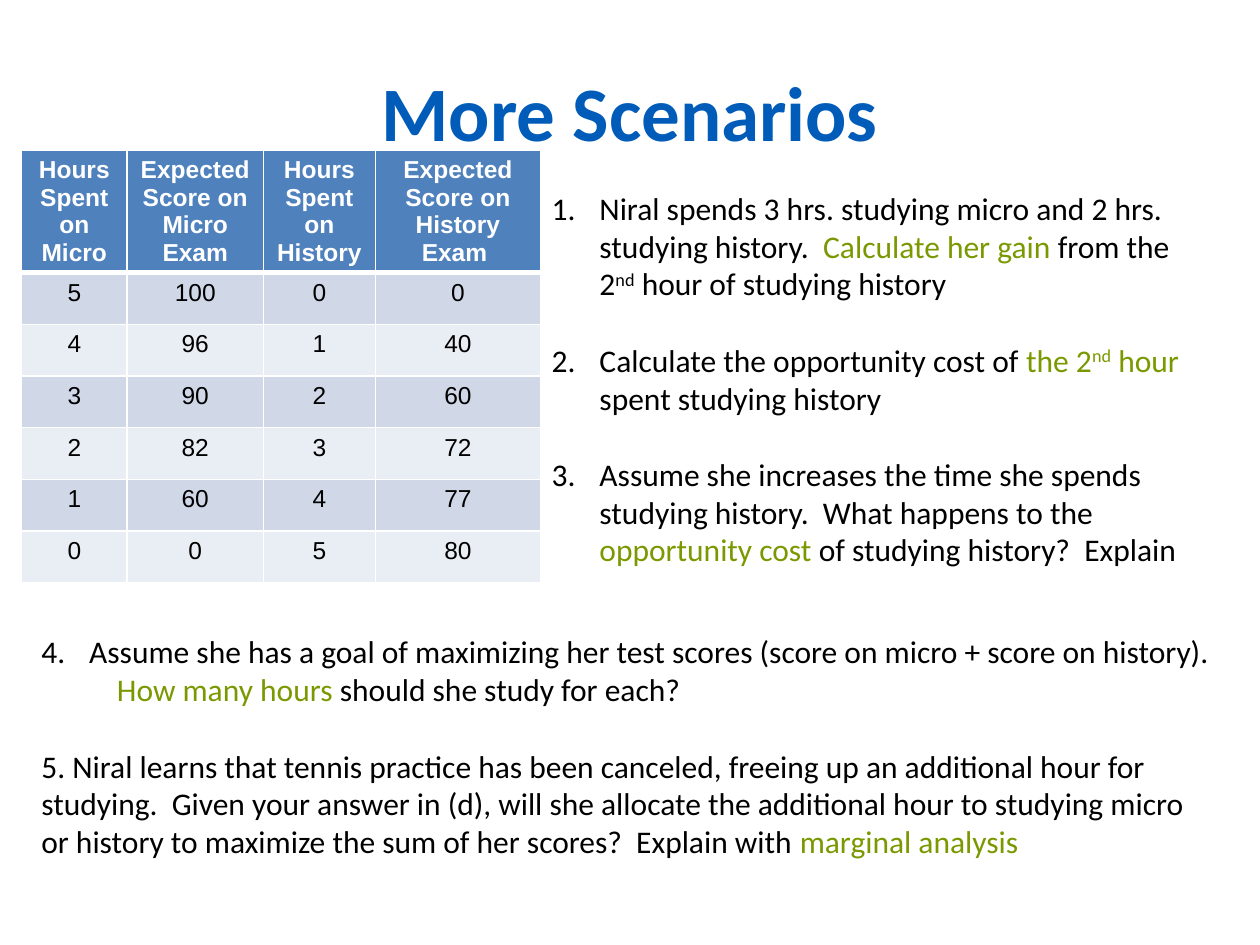
import pptx
import pptx.util
import pptx.dml.color
import pptx.enum.text
import pptx.oxml
import pptx.oxml.ns

COLS, ROWS = 100, 75
BLUE, GREEN, BLACK, WHITE = "005CB8", "7A9900", "000000", "FFFFFF"
HEAD, BANDS = "4F81BD", ("D0D8E8", "E9EDF4")
GAP, HANG = 22, 0.38
CENTER = pptx.enum.text.PP_ALIGN.CENTER

TITLES = (
    "Hours Spent on Micro",
    "Expected Score on Micro Exam",
    "Hours Spent on History",
    "Expected Score on\nHistory Exam ",
)
SCORES = (
    (5, 100, 0, 0),
    (4, 96, 1, 40),
    (3, 90, 2, 60),
    (2, 82, 3, 72),
    (1, 60, 4, 77),
    (0, 0, 5, 80),
)
WIDTHS = (8.4, 10.8, 8.9, 13.1)
HIGH, LOW = 9.6, 4.1

TASKS = (
    (
        ("Niral spends 3 hrs. studying micro and 2 hrs. studying history.  ", BLACK),
        ("Calculate her gain ", GREEN),
        ("from the 2", BLACK),
        ("nd", BLACK, True),
        (" hour of studying history", BLACK),
    ),
    (
        ("Calculate the opportunity cost of ", BLACK),
        ("the 2", GREEN),
        ("nd", GREEN, True),
        (" hour ", GREEN),
        ("spent studying history", BLACK),
    ),
    (
        ("Assume she increases the time she spends studying history.  "
         "What happens to the ", BLACK),
        ("opportunity cost ", GREEN),
        ("of studying history?  Explain", BLACK),
    ),
)
GOAL = (
    ("Assume she has a goal of maximizing her test scores "
     "(score on micro + score on history).", BLACK),
)
HOURS = (
    ("How many hours ", GREEN),
    ("should she study for each?", BLACK),
)
EXTRA = (
    ("5. Niral learns that tennis practice has been canceled, freeing up an "
     "additional hour for studying.  Given your answer in (d), will she allocate "
     "the additional hour to studying micro or history to maximize the sum of "
     "her scores?  Explain with ", BLACK),
    ("marginal analysis", GREEN),
)


def color(code):
    return pptx.dml.color.RGBColor.from_string(code)


def grid(*spots):
    return [pptx.util.Inches(spot / 10) for spot in spots]


def style(run, size, code, face="Calibri", bold=False):
    font = run.font
    font.name, font.size, font.bold = face, pptx.util.Pt(size), bold
    font.color.rgb = color(code)


def indent(para, left, start=None):
    props = para._p.get_or_add_pPr()
    props.set("marL", str(pptx.util.Inches(left)))
    if start:
        props.set("indent", str(-pptx.util.Inches(left)))
        mark = pptx.oxml.parse_xml(
            f'<a:buAutoNum {pptx.oxml.ns.nsdecls("a")} '
            f'type="arabicPeriod" startAt="{start}"/>')
        props.append(mark)


def fill_para(para, parts, gap=0):
    para.space_before = pptx.util.Pt(gap)
    for text, code, *raised in parts:
        run = para.add_run()
        run.text = text
        style(run, 18, code)
        if raised:
            run.font._element.set("baseline", "30000")


def add_box(slide, *spots):
    frame = slide.shapes.add_textbox(*grid(*spots)).text_frame
    frame.word_wrap = True
    return frame


def add_title(slide):
    title = slide.shapes.title
    title.left, title.top, title.width, title.height = grid(26.9, 4.6, 46.2, 8.4)
    frame = title.text_frame
    frame.text = "More Scenarios"
    frame.auto_size = pptx.enum.text.MSO_AUTO_SIZE.NONE
    frame.vertical_anchor = pptx.enum.text.MSO_ANCHOR.TOP
    para = frame.paragraphs[0]
    para.alignment = CENTER
    style(para.runs[0], 44, BLUE, bold=True)


def edge(cell, side, width):
    line = pptx.oxml.parse_xml(
        f'<a:ln{side} {pptx.oxml.ns.nsdecls("a")} w="{pptx.util.Pt(width)}">'
        f'<a:solidFill><a:srgbClr val="{WHITE}"/></a:solidFill></a:ln{side}>')
    cell._tc.get_or_add_tcPr().append(line)


def fill_cell(cell, text, row):
    head = row == 0
    thick = {"T": 3 if row == 1 else 1, "B": 3 if head else 1}
    for side in "LRTB":
        edge(cell, side, thick.get(side, 1))
    cell.fill.solid()
    cell.fill.fore_color.rgb = color(HEAD if head else BANDS[(row - 1) % 2])
    cell.text_frame.text = str(text)
    for para in cell.text_frame.paragraphs:
        para.alignment = CENTER
        style(para.runs[0], 14, WHITE if head else BLACK, "Arial", head)


def add_scores(slide):
    data = (TITLES, *SCORES)
    spots = grid(1.7, 11.9, sum(WIDTHS), HIGH + LOW * len(SCORES))
    table = slide.shapes.add_table(len(data), len(WIDTHS), *spots).table
    for col, width in zip(table.columns, grid(*WIDTHS)):
        col.width = width
    for row, line in enumerate(data):
        table.rows[row].height = grid(LOW if row else HIGH)[0]
        for col, text in enumerate(line):
            fill_cell(table.cell(row, col), text, row)


def add_tasks(slide):
    frame = add_box(slide, 42.8, 14.5, 53.6, 43.4)
    for num, parts in enumerate(TASKS):
        para = frame.add_paragraph() if num else frame.paragraphs[0]
        indent(para, HANG, 1)
        fill_para(para, parts, GAP if num else 0)


def add_goals(slide):
    frame = add_box(slide, 2.3, 49.7, 95.4, 25.2)
    goal = frame.paragraphs[0]
    indent(goal, HANG, 4)
    fill_para(goal, GOAL)
    hours = frame.add_paragraph()
    indent(hours, 0.6)
    fill_para(hours, HOURS)
    fill_para(frame.add_paragraph(), EXTRA, GAP)


def main():
    deck = pptx.Presentation()
    deck.slide_width, deck.slide_height = grid(COLS, ROWS)
    slide = deck.slides.add_slide(deck.slide_layouts[5])
    add_scores(slide)
    add_goals(slide)
    add_tasks(slide)
    add_title(slide)
    deck.save("out.pptx")


if __name__ == "__main__":
    main()
